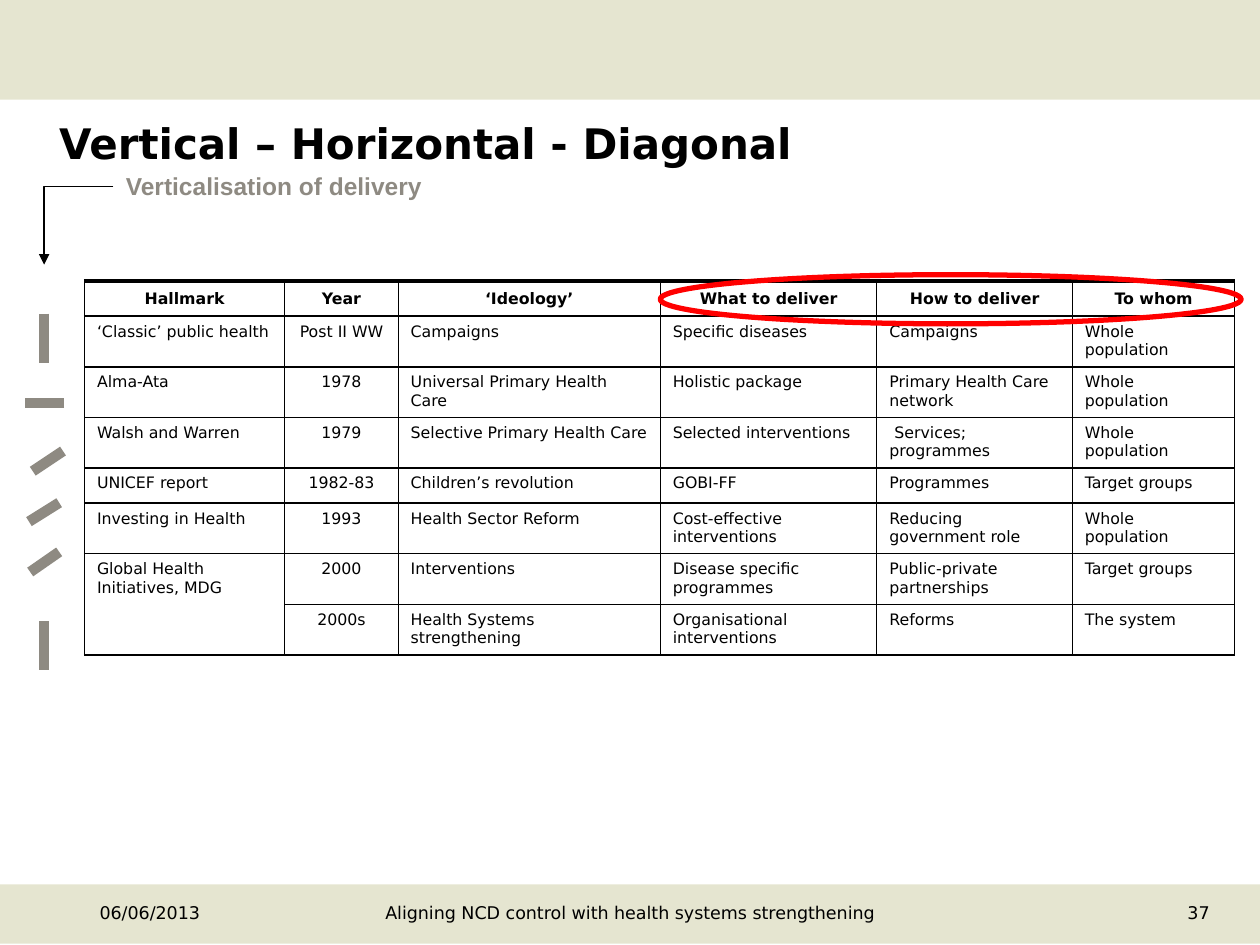
from dataclasses import dataclass

from lxml.etree import SubElement
from pptx import Presentation
from pptx.dml.color import RGBColor
from pptx.enum.shapes import MSO_CONNECTOR as Link, MSO_SHAPE as Shape
from pptx.enum.text import MSO_ANCHOR as Anchor, MSO_AUTO_SIZE as AutoSize, PP_ALIGN as Align
from pptx.oxml.ns import qn
from pptx.util import Inches, Pt


@dataclass(frozen=True)
class Theme:
    black: str = "000000"
    band: str = "E5E5D0"
    grey: str = "8E8A82"
    red: str = "FF0000"
    font: str = "DejaVu Sans"
    label_font: str = "Arial"
    title: int = 24
    label: int = 14
    footer: int = 10
    cell: int = 9


THEME = Theme()

# Table content
COLUMN_WIDTHS = [1.59, 0.9, 2.08, 1.72, 1.55, 1.29]
ROW_HEIGHT = 0.28
YEAR_COLUMN = 1
HALLMARKS = [
    ["Hallmark", "Year", "‘Ideology’", "What to deliver", "How to deliver", "To whom"],
    ["‘Classic’ public health", "Post II WW", "Campaigns", "Specific diseases",
     "Campaigns", "Whole population"],
    ["Alma-Ata", "1978", "Universal Primary Health Care", "Holistic package",
     "Primary Health Care network", "Whole population"],
    ["Walsh and Warren", "1979", "Selective Primary Health Care",
     "Selected interventions", " Services; programmes", "Whole population"],
    ["UNICEF report", "1982-83", "Children’s revolution", "GOBI-FF",
     "Programmes", "Target groups"],
    ["Investing in Health", "1993", "Health Sector Reform",
     "Cost-effective interventions", "Reducing government role", "Whole population"],
    ["Global Health Initiatives, MDG", "2000", "Interventions",
     "Disease specific programmes", "Public-private partnerships", "Target groups"],
    ["", "2000s", "Health Systems strengthening", "Organisational interventions",
     "Reforms", "The system"],
]

# Direction marks beside the rows: start and end points
DIRECTION_MARKS = [
    (0.35, 2.49, 0.35, 2.88),
    (0.51, 3.2, 0.2, 3.2),
    (0.5, 3.58, 0.26, 3.74),
    (0.47, 3.99, 0.23, 4.14),
    (0.47, 4.38, 0.24, 4.54),
    (0.35, 4.93, 0.35, 5.32),
]

FOOTERS = [
    ("06/06/2013", 0.79, 1.65, Align.LEFT),
    ("Aligning NCD control with health systems strengthening", 2.56, 4.88, Align.CENTER),
    ("37", 7.95, 1.65, Align.RIGHT),
]


def rgb(value):
    return RGBColor.from_string(value)


def write(frame, text, *, size, font=THEME.font, color=THEME.black, bold=False,
          align=Align.LEFT):
    paragraph = frame.paragraphs[0]
    paragraph.alignment = align
    run = paragraph.add_run()
    run.text = text
    run.font.size, run.font.name, run.font.bold = Pt(size), font, bold
    run.font.color.rgb = rgb(color)


def set_margins(frame, left=0, top=0, right=0, bottom=0):
    frame.margin_left, frame.margin_top = Inches(left), Inches(top)
    frame.margin_right, frame.margin_bottom = Inches(right), Inches(bottom)


def add_band(slide, top, height):
    band = slide.shapes.add_shape(Shape.RECTANGLE, 0, Inches(top), Inches(10), Inches(height))
    band.shadow.inherit = False
    band.fill.solid()
    band.fill.fore_color.rgb = rgb(THEME.band)
    band.line.fill.background()


def add_title(slide, text):
    title = slide.shapes.title
    title.left, title.top = Inches(0.47), Inches(0.93)
    title.width, title.height = Inches(8.82), Inches(0.55)
    frame = title.text_frame
    frame.auto_size, frame.vertical_anchor = AutoSize.NONE, Anchor.TOP
    set_margins(frame, bottom=0.05)
    write(frame, text, size=THEME.title, bold=True)


def add_footer(slide, text, left, width, align):
    frame = slide.shapes.add_textbox(
        Inches(left), Inches(7.16), Inches(width), Inches(0.25)).text_frame
    frame.word_wrap = True
    set_margins(frame)
    write(frame, text, size=THEME.footer, align=align)


def add_label(slide, text):
    frame = slide.shapes.add_textbox(
        Inches(0.9), Inches(1.31), Inches(2.55), Inches(0.33)).text_frame
    frame.word_wrap = False
    frame.auto_size = AutoSize.SHAPE_TO_FIT_TEXT
    write(frame, text, size=THEME.label, font=THEME.label_font, color=THEME.grey, bold=True)


def add_line(slide, points, color, width, kind=Link.STRAIGHT):
    line = slide.shapes.add_connector(kind, *map(Inches, points))
    line.line.color.rgb = rgb(color)
    line.line.width = Pt(width)
    SubElement(line._element.spPr, qn("a:effectLst"))
    return line


def add_bent_arrow(slide, points):
    arrow = add_line(slide, points, THEME.black, 0.75, Link.ELBOW)
    properties = arrow._element.spPr
    # One bend: run left from the label, then down to the marks
    properties.find(qn("a:prstGeom")).set("prst", "bentConnector2")
    transform = properties.find(qn("a:xfrm"))
    transform.set("flipH", "0")
    transform.set("flipV", "1")
    transform.set("rot", "10800000")
    SubElement(properties.find(qn("a:ln")), qn("a:tailEnd"), type="triangle")


def set_borders(cell, **widths):
    properties = cell._tc.get_or_add_tcPr()
    for position, (side, width) in enumerate(widths.items()):
        border = properties.makeelement(qn(f"a:ln{side}"), {"w": str(Pt(width))})
        fill = SubElement(border, qn("a:solidFill"))
        SubElement(fill, qn("a:srgbClr"), val=THEME.black)
        properties.insert(position, border)


def add_hallmark_table(slide):
    table = slide.shapes.add_table(
        len(HALLMARKS), len(COLUMN_WIDTHS), Inches(0.67), Inches(2.23),
        Inches(sum(COLUMN_WIDTHS)), Inches(ROW_HEIGHT * len(HALLMARKS))).table
    table.first_row = table.horz_banding = False
    for column, width in zip(table.columns, COLUMN_WIDTHS):
        column.width = Inches(width)
    for row in table.rows:
        row.height = Inches(ROW_HEIGHT)
    # The last hallmark covers two periods
    table.cell(6, 0).merge(table.cell(7, 0))

    for r, texts in enumerate(HALLMARKS):
        header = r == 0
        for c, text in enumerate(texts):
            cell = table.cell(r, c)
            cell.fill.background()
            borders = {"L": 0.75, "R": 0.75, "T": 2 if header else 1, "B": 1}
            if cell.is_spanned:
                del borders["T"]
            set_borders(cell, **borders)
            cell.vertical_anchor = Anchor.MIDDLE if header else Anchor.TOP
            if text:
                centred = header or c == YEAR_COLUMN
                write(cell.text_frame, text, size=THEME.cell, bold=header,
                      align=Align.CENTER if centred else Align.LEFT)


def add_highlight(slide):
    ring = slide.shapes.add_shape(
        Shape.OVAL, Inches(5.24), Inches(2.18), Inches(4.61), Inches(0.39))
    ring.shadow.inherit = False
    ring.fill.background()
    ring.line.color.rgb = rgb(THEME.red)
    ring.line.width = Pt(3)


def main():
    deck = Presentation()
    deck.slide_width, deck.slide_height = Inches(10), Inches(7.5)
    slide = deck.slides.add_slide(deck.slide_layouts[5])

    # Bands and footer
    add_band(slide, 7.02, 0.47)
    add_band(slide, 0, 0.79)
    for footer in FOOTERS:
        add_footer(slide, *footer)

    # Table with the delivery columns ringed
    add_title(slide, "Vertical – Horizontal - Diagonal")
    add_hallmark_table(slide)
    add_highlight(slide)

    # Direction marks and their label
    for points in DIRECTION_MARKS:
        add_line(slide, points, THEME.grey, 6)
    add_label(slide, "Verticalisation of delivery")
    add_bent_arrow(slide, (0.9, 1.48, 0.35, 2.1))

    deck.save("out.pptx")


if __name__ == "__main__":
    main()
